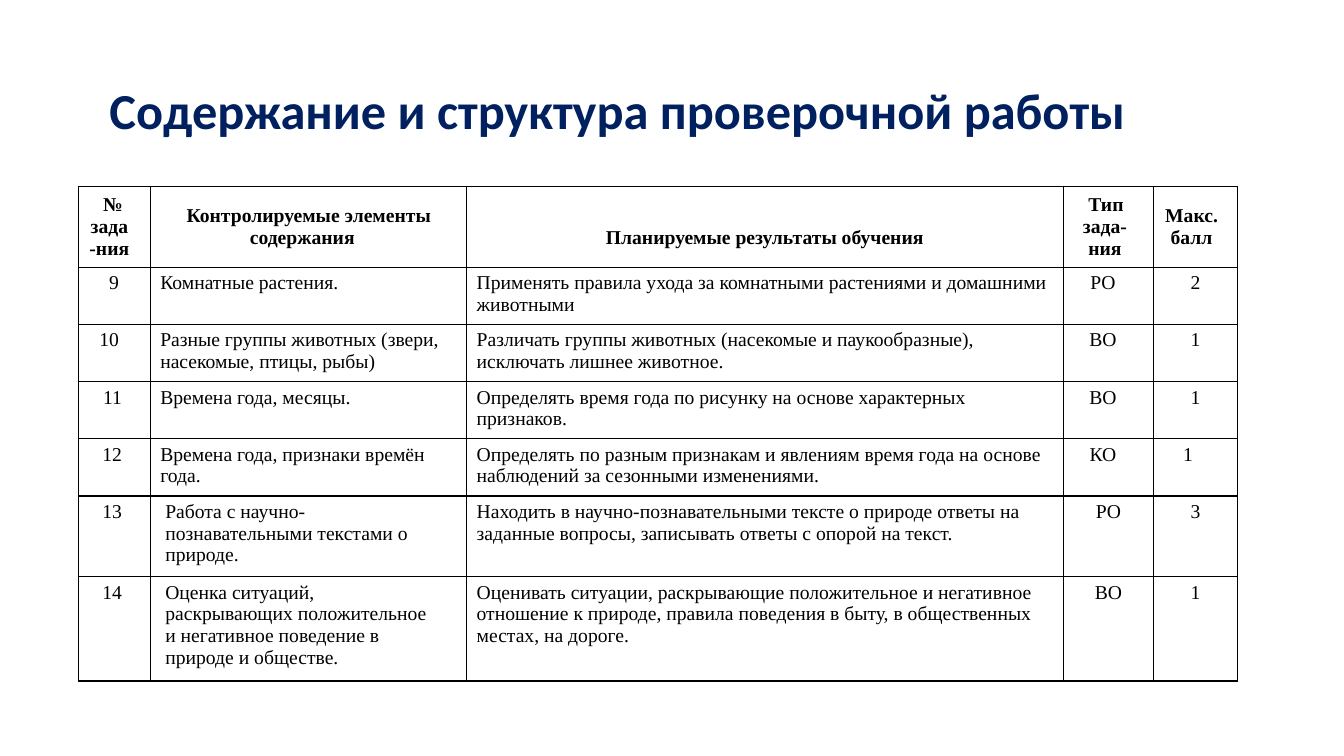
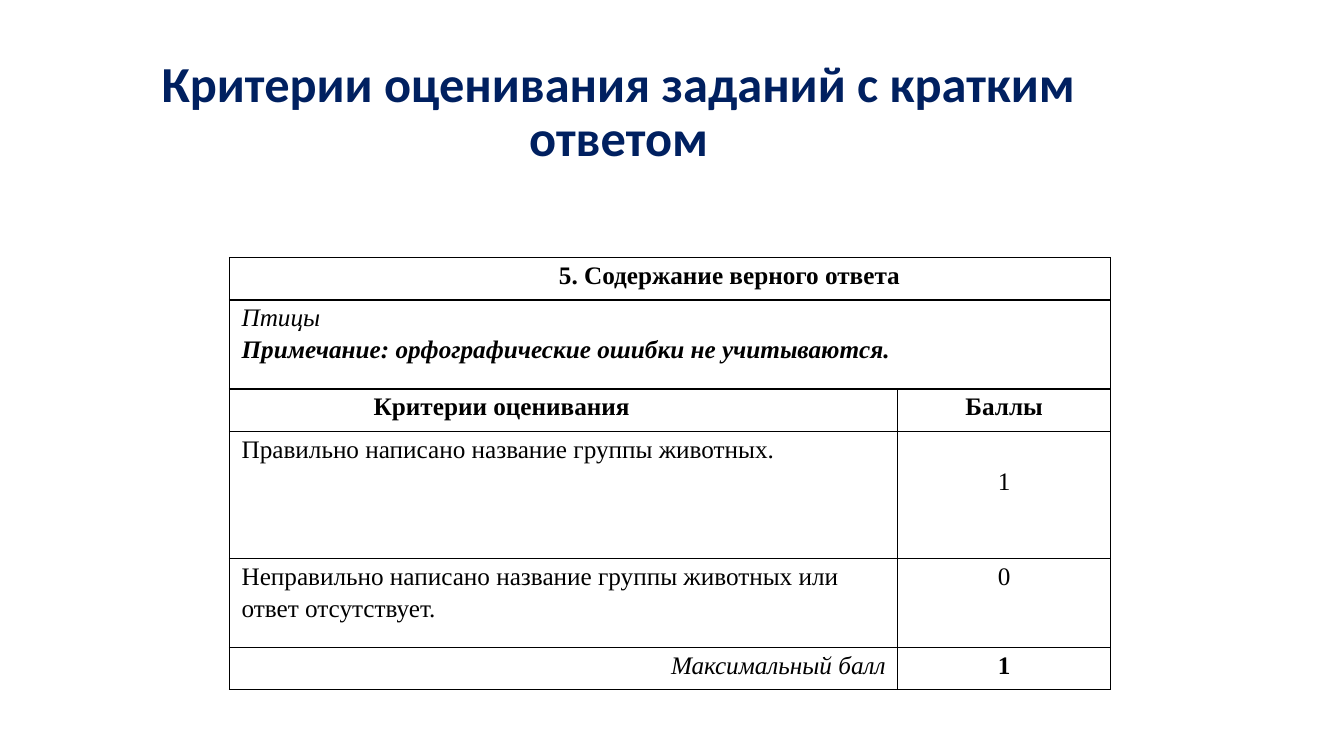
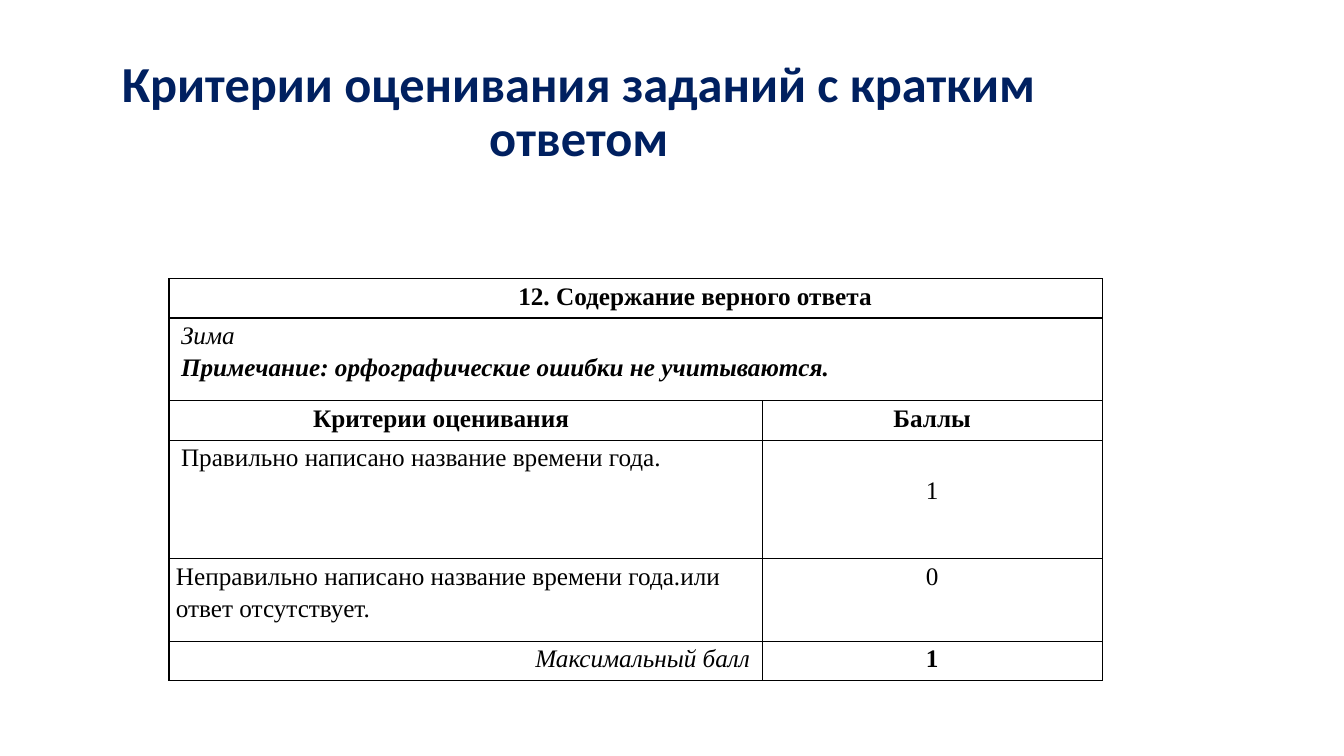
from dataclasses import dataclass

from lxml import etree
from pptx import Presentation
from pptx.dml.color import RGBColor
from pptx.enum.text import MSO_ANCHOR, PP_ALIGN
from pptx.oxml.ns import qn
from pptx.util import Inches, Pt

LEFT, CENTER, RIGHT = PP_ALIGN.LEFT, PP_ALIGN.CENTER, PP_ALIGN.RIGHT
TOP, MIDDLE = MSO_ANCHOR.TOP, MSO_ANCHOR.MIDDLE


@dataclass(frozen=True)
class Theme:
    width: float = 13.33
    height: float = 7.5
    navy: str = "002060"
    black: str = "000000"
    title_font: str = "Calibri"
    table_font: str = "Times New Roman"
    title_size: int = 36
    content_size: int = 14
    criteria_size: int = 18
    title_spacing: float = 0.9
    criteria_spacing: float = 1.15
    border: int = 1


@dataclass(frozen=True)
class Line:
    text: str
    align: PP_ALIGN = LEFT
    bold: bool = False
    italic: bool = False
    left: float = 0
    right: float = 0
    indent: float = 0


@dataclass(frozen=True)
class TableStyle:
    size: int
    spacing: float
    side: float
    edge: float


THEME = Theme()
CONTENT_STYLE = TableStyle(THEME.content_size, 1.0, 0.1, 0.05)
CRITERIA_STYLE = TableStyle(THEME.criteria_size, THEME.criteria_spacing, 0.07, 0)
CRITERIA_TITLE = "Критерии оценивания заданий с кратким ответом"
CRITERIA_ROWS = (1, 2.1, 1, 3, 2.1, 1)

CONTENT_HEADER = [
    ([Line("№ зада", CENTER, True, right=0.1, indent=0.07),
      Line("-ния", CENTER, True, right=0.1)], 0),
    ([Line("Контролируемые элементы содержания", CENTER, True, right=0.12, indent=0.13)], 0),
    ([Line("Планируемые результаты обучения", CENTER, True)], 0.22),
    ([Line("Тип зада-", CENTER, True, right=0.07, indent=0.02),
      Line("ния", CENTER, True, right=0.07)], 0),
    ([Line("Макс. балл", CENTER, True, right=0.08, indent=-0.04)], 0),
]
CONTENT_TASKS = [
    ("9", "Комнатные растения.",
     "Применять правила ухода за комнатными растениями и домашними животными", "РО", "2"),
    ("10", "Разные группы животных (звери, насекомые, птицы, рыбы)",
     "Различать группы животных (насекомые и паукообразные), исключать лишнее животное.",
     "ВО", "1"),
    ("11", "Времена года, месяцы.",
     "Определять время года по рисунку на основе характерных признаков.", "ВО", "1"),
    ("12", "Времена года, признаки времён года.",
     "Определять по разным признакам и явлениям время года на основе наблюдений за "
     "сезонными изменениями.", "КО", "1"),
    ("13", "Работа с научно-познавательными текстами о природе.",
     "Находить в научно-познавательными тексте о природе ответы на заданные вопросы, "
     "записывать ответы с опорой на текст.", "РО", "3"),
    ("14", "Оценка ситуаций, раскрывающих положительное и негативное поведение в природе "
     "и обществе.",
     "Оценивать ситуации, раскрывающие положительное и негативное отношение к природе, "
     "правила поведения в быту, в общественных местах, на дороге.", "ВО", "1"),
]
CONTENT_LINES = (3, 2, 2, 2, 2, 3, 4)
OUTER_TASKS = ("9", "10")
INDENTED_TASKS = ("13", "14")


def percent_box(left, top, width, height):
    return [Inches(share * side / 100) for share, side in
            zip((left, top, width, height), (THEME.width, THEME.height) * 2)]


def style_font(font, name, size, color, bold, italic=False):
    font.name, font.size = name, Pt(size)
    font.bold, font.italic = bold, italic
    font.color.rgb = RGBColor.from_string(color)


def add_title(slide, text, box):
    frame = slide.shapes.add_textbox(*percent_box(*box)).text_frame
    frame.word_wrap = True
    frame.vertical_anchor = MIDDLE
    heading = frame.paragraphs[0]
    heading.text = text
    heading.alignment = CENTER
    heading.line_spacing = THEME.title_spacing
    style_font(heading.font, THEME.title_font, THEME.title_size, THEME.navy, True)


def add_borders(cell):
    properties = cell._tc.get_or_add_tcPr()
    for position, side in enumerate(("a:lnL", "a:lnR", "a:lnT", "a:lnB")):
        border = etree.Element(qn(side), w=str(Pt(THEME.border)))
        fill = etree.SubElement(border, qn("a:solidFill"))
        etree.SubElement(fill, qn("a:srgbClr"), val=THEME.black)
        properties.insert(position, border)


def add_grid(slide, box, columns, rows):
    left, top, width, height = percent_box(*box)
    table = slide.shapes.add_table(len(rows), len(columns), left, top, width, height).table
    table.first_row = table.horz_banding = False
    for column, weight in zip(table.columns, columns):
        column.width = int(width * weight / sum(columns))
    for row, weight in zip(table.rows, rows):
        row.height = int(height * weight / sum(rows))
    for cell in table.iter_cells():
        cell.fill.background()
        add_borders(cell)
    return table


def fill_cell(cell, lines, style, anchor=TOP, drop=0):
    cell.vertical_anchor = anchor
    cell.margin_left = cell.margin_right = Inches(style.side)
    cell.margin_top = Inches(style.edge + drop)
    cell.margin_bottom = Inches(style.edge)
    frame = cell.text_frame
    for index, line in enumerate(lines):
        paragraph = frame.add_paragraph() if index else frame.paragraphs[0]
        paragraph.text = line.text
        paragraph.alignment = line.align
        paragraph.line_spacing = style.spacing
        properties = paragraph._p.get_or_add_pPr()
        for name, inches in (("marL", line.left), ("marR", line.right), ("indent", line.indent)):
            properties.set(name, str(Inches(inches)))
        style_font(paragraph.font, THEME.table_font, style.size, THEME.black,
                   line.bold, line.italic)


def task_lines(number, element, result, kind, score):
    indented = number in INDENTED_TASKS
    return [
        Line(number, RIGHT, right=0.21 if number in OUTER_TASKS else 0.18),
        Line(element, left=0.05, right=0.25) if indented else Line(element),
        Line(result),
        Line(kind, CENTER, left=0.11 if indented else 0, right=0.11),
        Line(score, left=0.19) if number == "12" else Line(score, CENTER),
    ]


def content_slide(slide):
    add_title(slide, "Содержание и структура проверочной работы", (6.87, 5.33, 78.17, 19.33))
    table = add_grid(slide, (5.85, 24.67, 86.23, 61.4), (0.71, 3.14, 5.92, 0.9, 0.83),
                     [count + 0.47 for count in CONTENT_LINES])
    for column, (lines, drop) in enumerate(CONTENT_HEADER):
        fill_cell(table.cell(0, column), lines, CONTENT_STYLE, MIDDLE, drop)
    for row, task in enumerate(CONTENT_TASKS, 1):
        for column, line in enumerate(task_lines(*task)):
            fill_cell(table.cell(row, column), [line], CONTENT_STYLE)


def criteria_slide(slide, title_box, table_box, columns, number, answer, correct, wrong):
    add_title(slide, CRITERIA_TITLE, title_box)
    table = add_grid(slide, table_box, columns, CRITERIA_ROWS)
    full_rows = [
        [Line(f"{number}. Содержание верного ответа", CENTER, True, left=1.48, right=0.3)],
        [Line(answer, italic=True, left=0.05),
         Line("Примечание: орфографические ошибки не учитываются.",
              bold=True, italic=True, left=0.05)],
    ]
    for row, lines in enumerate(full_rows):
        table.cell(row, 0).merge(table.cell(row, 1))
        fill_cell(table.cell(row, 0), lines, CRITERIA_STYLE)
    score_rows = [
        (Line("Критерии оценивания", bold=True, left=1.36), Line("Баллы", CENTER, True), 0),
        (Line(correct, left=0.05), Line("1", CENTER), 0.32),
        (wrong, Line("0", CENTER), 0),
        (Line("Максимальный балл", RIGHT, italic=True, right=0.05), Line("1", CENTER, True), 0),
    ]
    for row, (criterion, score, drop) in enumerate(score_rows, len(full_rows)):
        fill_cell(table.cell(row, 0), [criterion], CRITERIA_STYLE)
        fill_cell(table.cell(row, 1), [score], CRITERIA_STYLE, drop=drop)


def main():
    deck = Presentation()
    deck.slide_width, deck.slide_height = Inches(THEME.width), Inches(THEME.height)
    blank = deck.slide_layouts[6]
    content_slide(deck.slides.add_slide(blank))
    criteria_slide(
        deck.slides.add_slide(blank), (6.87, 5.33, 78.32, 19.33), (17.08, 34.07, 65.55, 57.2),
        (75.85, 24.15), 5, "Птицы", "Правильно написано название группы животных.",
        Line("Неправильно написано название группы животных или ответ отсутствует.",
             left=0.05, right=0.05))
    criteria_slide(
        deck.slides.add_slide(blank), (4.1, 5.33, 77.94, 19.33), (12.57, 36.86, 69.45, 53.2),
        (63.55, 36.45), 12, "Зима", "Правильно написано название времени года.",
        Line("Неправильно написано название времени года.или ответ отсутствует."))
    deck.save("out.pptx")


if __name__ == "__main__":
    main()
